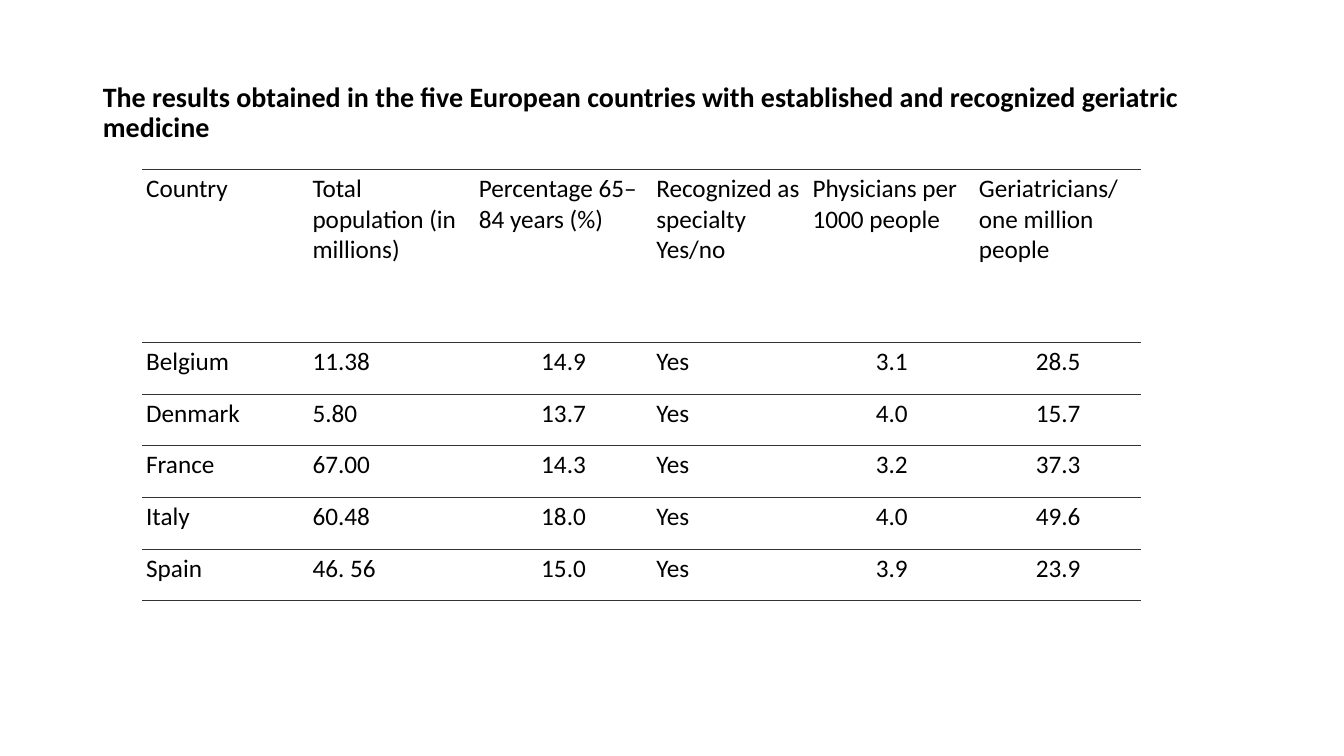
import dataclasses

import lxml.etree
import pptx
import pptx.dml.color
import pptx.enum.text
import pptx.oxml.ns
import pptx.table
import pptx.text.text
import pptx.util

Inches = pptx.util.Inches
Align = pptx.enum.text.PP_ALIGN
Anchor = pptx.enum.text.MSO_ANCHOR


@dataclasses.dataclass(frozen=True)
class Theme:
    font: str = "Calibri"
    ink: str = "000000"
    rule: str = "333333"
    head: float = 20
    body: float = 18
    line: float = 0.75
    inset: float = 0.04


@dataclasses.dataclass(frozen=True)
class Column:
    label: str
    width: float
    align: Align = Align.LEFT


@dataclasses.dataclass(frozen=True)
class Country:
    name: str
    people: str
    aged: str
    special: str
    doctors: str
    geriatric: str


THEME = Theme()
TITLE = ("The results obtained in the five European countries "
         "with established and recognized geriatric medicine")
COLUMNS = [
    Column("Country", 1.65),
    Column("Total population (in millions)", 1.65),
    Column("Percentage 65–84 years (%)", 1.76, Align.CENTER),
    Column("Recognized as specialty\nYes/no", 1.55),
    Column("Physicians per 1000 people", 1.65, Align.CENTER),
    Column("Geriatricians/one million people", 1.65, Align.CENTER),
]
COUNTRIES = [
    Country("Belgium", "11.38", "14.9", "Yes", "3.1", "28.5"),
    Country("Denmark", "5.80", "13.7", "Yes", "4.0", "15.7"),
    Country("France", "67.00", "14.3", "Yes", "3.2", "37.3"),
    Country("Italy", "60.48", "18.0", "Yes", "4.0", "49.6"),
    Country("Spain", "46. 56", "15.0", "Yes", "3.9", "23.9"),
]
HEAD_ROW, BODY_ROW = 1.72, 0.512


def write(para: pptx.text.text._Paragraph, text: str, size: float,
          bold: bool = False) -> None:
    """Add one run per line of text, with line breaks between them."""
    for index, part in enumerate(text.split("\n")):
        if index:
            para.add_line_break()
        run = para.add_run()
        run.text = part
        run.font.name = THEME.font
        run.font.size = pptx.util.Pt(size)
        run.font.bold = bold
        run.font.color.rgb = pptx.dml.color.RGBColor.from_string(THEME.ink)


def border(cell: pptx.table._Cell) -> None:
    """Rule the cell above and below and leave its sides open."""
    qn = pptx.oxml.ns.qn
    props = cell._tc.get_or_add_tcPr()
    for index, side in enumerate(("lnL", "lnR", "lnT", "lnB")):
        line = lxml.etree.Element(qn(f"a:{side}"))
        props.insert(index, line)
        if side in ("lnL", "lnR"):
            lxml.etree.SubElement(line, qn("a:noFill"))
        else:
            line.set("w", str(pptx.util.Pt(THEME.line)))
            fill = lxml.etree.SubElement(line, qn("a:solidFill"))
            lxml.etree.SubElement(fill, qn("a:srgbClr"), val=THEME.rule)


def fill_cell(cell: pptx.table._Cell, text: str, align: Align) -> None:
    inset = Inches(THEME.inset)
    cell.margin_left = cell.margin_right = inset
    cell.margin_top = cell.margin_bottom = inset
    cell.vertical_anchor = Anchor.TOP
    cell.fill.background()
    border(cell)
    para = cell.text_frame.paragraphs[0]
    para.alignment = align
    write(para, text, THEME.body)


def add_title(slide: pptx.slide.Slide) -> None:
    title = slide.shapes.title
    title.left, title.top = Inches(0.92), Inches(0.4)
    title.width, title.height = Inches(11.5), Inches(1.45)
    frame = title.text_frame
    frame.word_wrap = True
    frame.auto_size = pptx.enum.text.MSO_AUTO_SIZE.NONE
    frame.vertical_anchor = Anchor.MIDDLE
    para = frame.paragraphs[0]
    para.alignment = Align.LEFT
    para.line_spacing = 0.9
    para.space_before = pptx.util.Pt(0)
    write(para, TITLE, THEME.head, bold=True)


def add_grid(slide: pptx.slide.Slide) -> None:
    width = sum(column.width for column in COLUMNS)
    height = HEAD_ROW + BODY_ROW * len(COUNTRIES)
    grid = slide.shapes.add_table(
        len(COUNTRIES) + 1, len(COLUMNS), Inches(1.41), Inches(1.68),
        Inches(width), Inches(height)).table
    grid.first_row = grid.horz_banding = False
    for index, row in enumerate(grid.rows):
        row.height = Inches(BODY_ROW if index else HEAD_ROW)
    for col, column in enumerate(COLUMNS):
        grid.columns[col].width = Inches(column.width)
        fill_cell(grid.cell(0, col), column.label, Align.LEFT)
        for row, country in enumerate(COUNTRIES, 1):
            value = dataclasses.astuple(country)[col]
            fill_cell(grid.cell(row, col), value, column.align)


def main() -> None:
    deck = pptx.Presentation()
    deck.slide_width, deck.slide_height = Inches(13.33), Inches(7.5)
    slide = deck.slides.add_slide(deck.slide_layouts[5])
    add_title(slide)
    add_grid(slide)
    deck.save("out.pptx")


if __name__ == "__main__":
    main()
